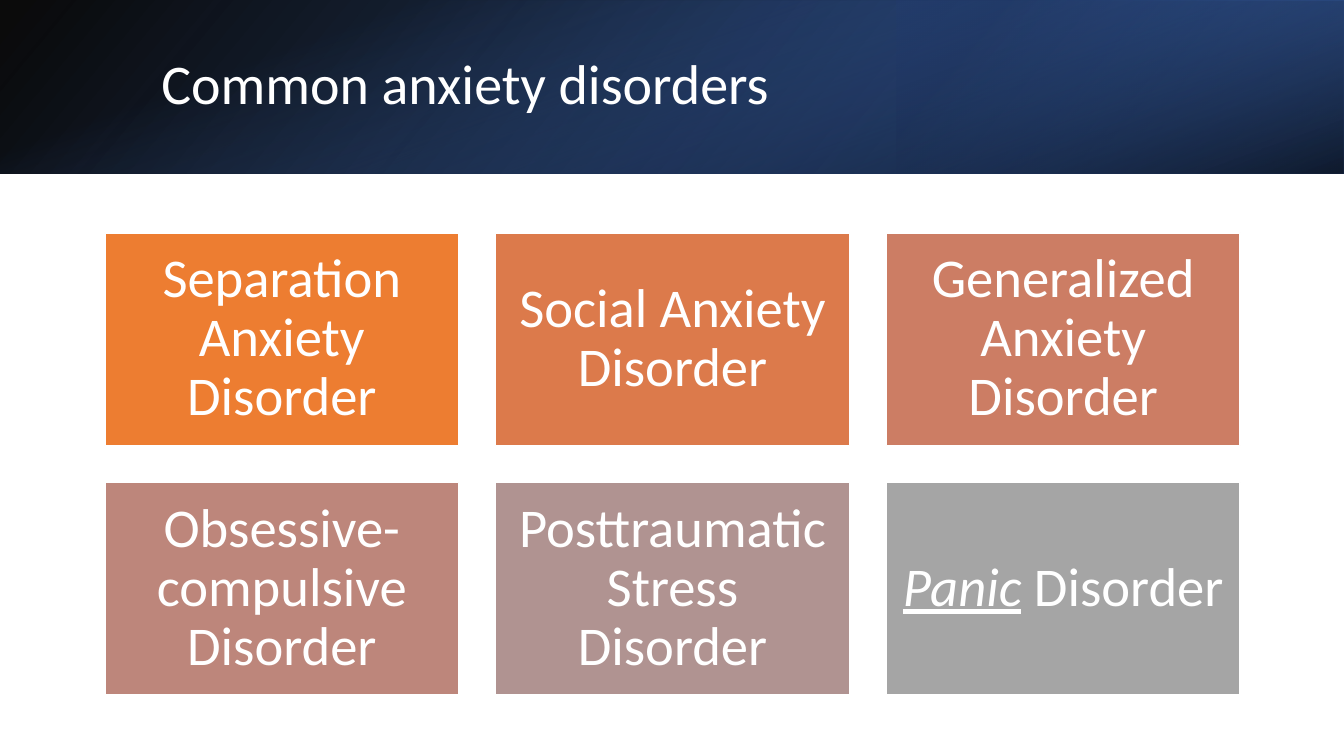
"""Builds the slide on common anxiety disorders: a gradient header over six tiles."""
from lxml import etree
from pptx import Presentation
from pptx.dml.color import RGBColor
from pptx.enum.shapes import MSO_SHAPE
from pptx.enum.text import MSO_ANCHOR, MSO_AUTO_SIZE, PP_ALIGN
from pptx.oxml.ns import qn
from pptx.util import Inches, Pt

RECTANGLE = MSO_SHAPE.RECTANGLE
MIDDLE = MSO_ANCHOR.MIDDLE
NO_AUTOFIT = MSO_AUTO_SIZE.NONE
LEFT, CENTER = PP_ALIGN.LEFT, PP_ALIGN.CENTER
TITLE_ONLY = 5
WHITE = "FFFFFF"


def color(code):
    """Return the colour for a hex string."""
    return RGBColor.from_string(code)


def style_paragraph(para, size, alignment):
    """Give a paragraph the slide's white Calibri text."""
    para.alignment = alignment
    para.line_spacing = 0.9
    para.font.name = "Calibri"
    para.font.size = Pt(size)
    para.font.color.rgb = color(WHITE)


deck = Presentation()
deck.slide_width, deck.slide_height = Inches(13.33), Inches(7.5)
page = deck.slides.add_slide(deck.slide_layouts[TITLE_ONLY])

# (left, top, width, height), rotation, flipped, clockwise angle, (position, colour, opacity)
header_bands = [
    ((0, 0, 13.33, 1.72), 0, True, 140, [(0, "000000", 96), (100, "2F5597", 100)]),
    ((8.89, 0, 4.44, 1.72), 180, True, 320, [(19, "203864", 68), (100, "4472C4", 79)]),
    ((5.8, -5.8, 1.72, 13.33), 90, False, 340, [(23, "4472C4", 0), (99, "000000", 74)]),
]
for frame, rotation, flipped, angle, stops in header_bands:
    band = page.shapes.add_shape(RECTANGLE, *map(Inches, frame))
    band.shadow.inherit = False
    band.line.fill.background()
    band.rotation = rotation
    if flipped:
        band.element.spPr.find(qn("a:xfrm")).set("flipH", "1")
    band.fill.gradient()
    band.fill.gradient_angle = 360 - angle
    for stop, (position, code, opacity) in zip(band.fill.gradient_stops, stops):
        stop.position = position / 100
        stop.color.rgb = color(code)
    for node, (position, code, opacity) in zip(band.element.spPr.iter(qn("a:srgbClr")), stops):
        etree.SubElement(node, qn("a:alpha")).set("val", str(opacity * 1000))

title = page.shapes.title
page.shapes.element.append(title.element)
title.left, title.top = Inches(1.5), Inches(0.38)
title.width, title.height = Inches(10.98), Inches(0.96)
title.text_frame.text = "Common anxiety disorders"
title.text_frame.auto_size = NO_AUTOFIT
title.text_frame.vertical_anchor = MIDDLE
style_paragraph(title.text_frame.paragraphs[0], 40, LEFT)

disorders = [
    ("Separation", " Anxiety Disorder", "ED7D31"),
    ("Social", " Anxiety Disorder", "DC7A4B"),
    ("Generalized", " Anxiety Disorder", "CC7D64"),
    ("Obsessive-compulsive", " Disorder", "BD867B"),
    ("Posttraumatic", " Stress Disorder", "B09391"),
    ("Panic", " Disorder", "A5A5A5"),
]
tile_width, tile_height, gap = 3.51, 2.11, 0.365
for index, (kind, ending, fill) in enumerate(disorders):
    row, column = divmod(index, 3)
    tile = page.shapes.add_shape(
        RECTANGLE,
        Inches(1.04 + column * (tile_width + gap)),
        Inches(2.31 + row * (tile_height + gap)),
        Inches(tile_width),
        Inches(tile_height),
    )
    tile.shadow.inherit = False
    tile.fill.solid()
    tile.fill.fore_color.rgb = color(fill)
    tile.line.color.rgb = color(WHITE)
    tile.line.width = Pt(1)
    frame = tile.text_frame
    frame.word_wrap = True
    frame.vertical_anchor = MIDDLE
    frame.margin_left = frame.margin_right = Inches(0.16)
    frame.margin_top = frame.margin_bottom = Inches(0.16)
    para = frame.paragraphs[0]
    style_paragraph(para, 39, CENTER)
    if kind == "Panic":
        span = para.add_run()
        span.text = kind
        span.font.italic = span.font.underline = True
        para.add_run().text = ending
    else:
        para.add_run().text = kind + ending

deck.save("out.pptx")
